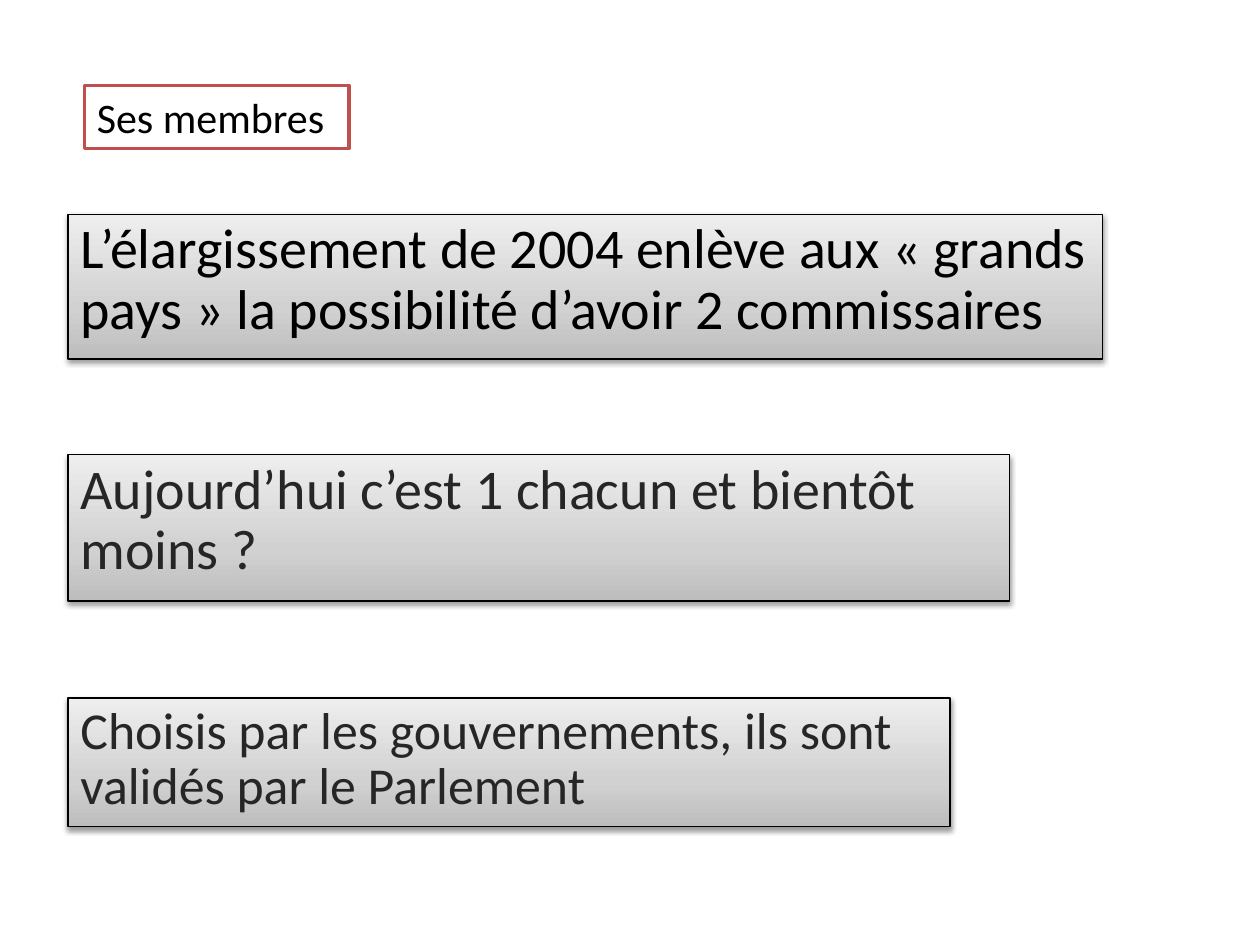
from dataclasses import dataclass

from lxml import etree
from pptx import Presentation
from pptx import util as u
from pptx.dml.color import RGBColor
from pptx.enum import shapes, text
from pptx.oxml.ns import qn


@dataclass(frozen=True)
class Theme:
    font: str = "Calibri"
    black: str = "000000"
    soft_black: str = "262626"
    white: str = "FFFFFF"
    red: str = "C0504D"
    gradient: tuple = ((0, "BDBDBD"), (35, "D1D1D1"), (100, "EEEEEE"))
    heading_size: float = 24
    statement_size: float = 32
    small_statement_size: float = 29.6


THEME = Theme()
STATEMENT_LEFT = 0.54


def add_node(parent, tag, **attributes):
    return etree.SubElement(parent, qn(tag), attributes)


def write_text(shape, words, *, size, color=THEME.black, wrap=True, line_spacing=None):
    frame = shape.text_frame
    frame.word_wrap = wrap
    frame.vertical_anchor = text.MSO_ANCHOR.TOP
    paragraph = frame.paragraphs[0]
    paragraph.alignment = text.PP_ALIGN.LEFT
    paragraph.line_spacing = line_spacing
    run = paragraph.add_run()
    run.text = words
    run.font.name = THEME.font
    run.font.size = u.Pt(size)
    run.font.color.rgb = RGBColor.from_string(color)


def add_box(slide, left, top, width, height, *, line, line_width):
    box = slide.shapes.add_shape(
        shapes.MSO_SHAPE.RECTANGLE,
        u.Inches(left), u.Inches(top), u.Inches(width), u.Inches(height),
    )
    box.shadow.inherit = False
    box.line.color.rgb = RGBColor.from_string(line)
    box.line.width = u.Pt(line_width)
    return box


def shade(box):
    """Fill the box with the grey gradient, darkest at the bottom."""
    box.fill.gradient()
    gradient = box._element.spPr.find(qn("a:gradFill"))
    for child in list(gradient):
        gradient.remove(child)
    stops = add_node(gradient, "a:gsLst")
    for percent, color in THEME.gradient:
        stop = add_node(stops, "a:gs", pos=str(percent * 1000))
        add_node(stop, "a:srgbClr", val=color)
    add_node(gradient, "a:lin", ang="16200000", scaled="0")


def drop_shadow(box):
    effects = box._element.spPr.find(qn("a:effectLst"))
    shadow = add_node(effects, "a:outerShdw", blurRad="40000", dist="20000",
                      dir="5400000", rotWithShape="0")
    color = add_node(shadow, "a:srgbClr", val=THEME.black)
    add_node(color, "a:alpha", val="38000")


def add_statement(slide, words, top, width, height, size, color):
    box = add_box(slide, STATEMENT_LEFT, top, width, height,
                  line=THEME.black, line_width=0.75)
    shade(box)
    drop_shadow(box)
    write_text(box, words, size=size, color=color, line_spacing=0.9)


def add_heading(slide, words):
    box = add_box(slide, 0.67, 0.68, 2.1, 0.5, line=THEME.red, line_width=2)
    box.fill.solid()
    box.fill.fore_color.rgb = RGBColor.from_string(THEME.white)
    write_text(box, words, size=THEME.heading_size, wrap=False)
    box.text_frame.auto_size = text.MSO_AUTO_SIZE.SHAPE_TO_FIT_TEXT


def main():
    deck = Presentation()
    deck.slide_width, deck.slide_height = u.Inches(10), u.Inches(7.5)
    slide = deck.slides.add_slide(deck.slide_layouts[6])

    statements = [
        ("L’élargissement de 2004 enlève aux « grands pays » la possibilité d’avoir 2 commissaires",
         1.7, 8.21, 1.15, THEME.statement_size, THEME.black),
        ("Aujourd’hui c’est 1 chacun et bientôt moins ?",
         3.61, 7.47, 1.16, THEME.statement_size, THEME.soft_black),
        ("Choisis par les gouvernements, ils sont validés par le Parlement",
         5.54, 7, 1.02, THEME.small_statement_size, THEME.soft_black),
    ]
    for statement in statements:
        add_statement(slide, *statement)
    add_heading(slide, "Ses membres")

    deck.save("out.pptx")


if __name__ == "__main__":
    main()
